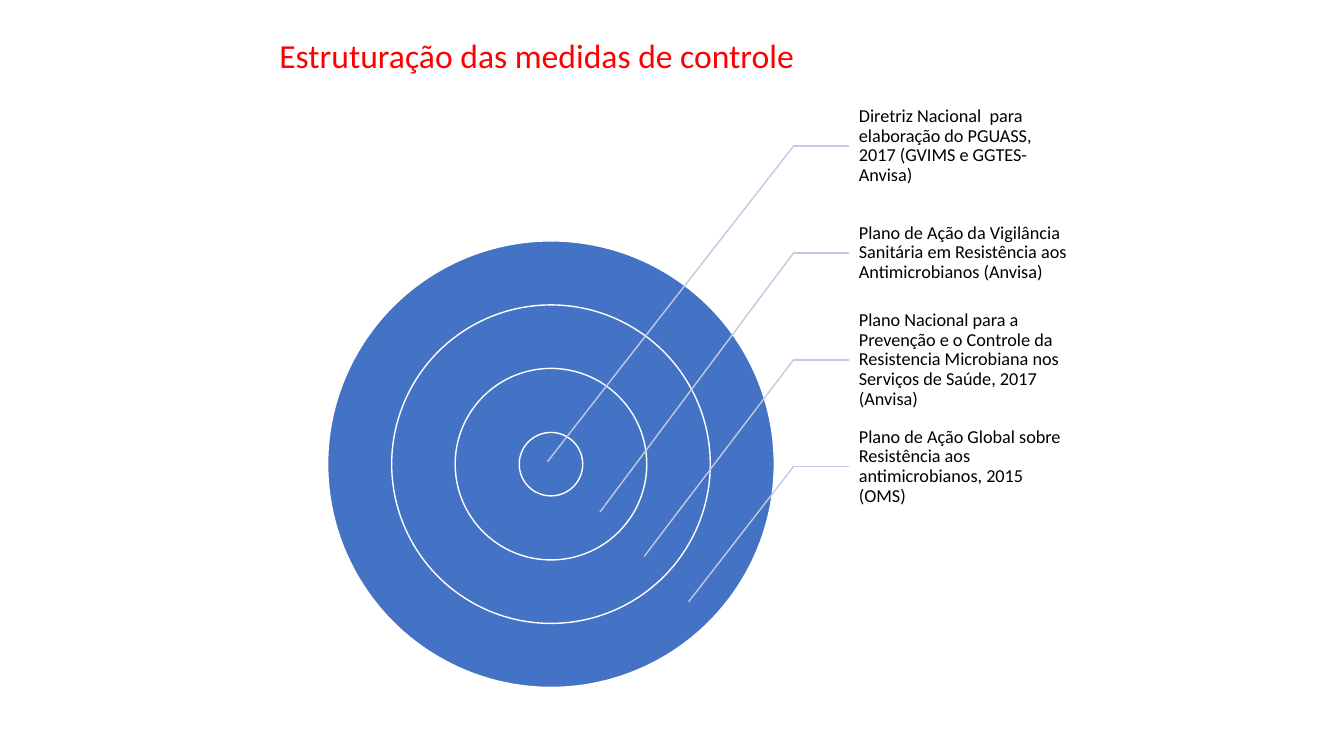
from dataclasses import dataclass

from lxml.etree import SubElement
from pptx import Presentation
from pptx.dml.color import RGBColor
from pptx.enum.shapes import MSO_CONNECTOR, MSO_SHAPE
from pptx.enum.text import MSO_ANCHOR, PP_ALIGN
from pptx.oxml.ns import qn
from pptx.shapes.shapetree import GroupShapes
from pptx.text.text import TextFrame
from pptx.util import Inches, Pt

COLORS = {
    "title": "FF0000",
    "text": "000000",
    "ring": "4472C4",
    "edge": "FFFFFF",
    "leader": "C1C9E4",
}
FONT = "Calibri"

CENTER_X, CENTER_Y = 5.465, 4.605
DIAMETERS = [4.43, 3.16, 1.9, 0.63]

LABEL_X, LABEL_W, LABEL_H = 8.42, 2.21, 1.06
LABEL_TOP = 0.92
BEND_X = 7.87


@dataclass
class Level:
    text: str
    tip_x: float
    tip_y: float


LEVELS = [
    Level("Diretriz Nacional  para elaboração do PGUASS, 2017 (GVIMS e GGTES- Anvisa)", 5.43, 4.58),
    Level("Plano de Ação da Vigilância Sanitária em Resistência aos Antimicrobianos (Anvisa)", 5.95, 5.08),
    Level(
        "Plano Nacional para a Prevenção e o Controle da Resistencia Microbiana "
        "nos Serviços de Saúde, 2017 (Anvisa)",
        6.39,
        5.52,
    ),
    Level("Plano de Ação Global sobre Resistência aos antimicrobianos, 2015 (OMS)", 6.83, 5.97),
]


def color(name: str) -> RGBColor:
    return RGBColor.from_string(COLORS[name])


def write(frame: TextFrame, text: str, size: float, shade: str) -> None:
    frame.word_wrap = True
    frame.vertical_anchor = MSO_ANCHOR.MIDDLE
    para = frame.paragraphs[0]
    para.alignment = PP_ALIGN.LEFT
    para.line_spacing = 0.9
    run = para.add_run()
    run.text = text
    run.font.name = FONT
    run.font.size = Pt(size)
    run.font.color.rgb = color(shade)


def add_ring(shapes: GroupShapes, size: float) -> None:
    ring = shapes.add_shape(
        MSO_SHAPE.OVAL,
        Inches(CENTER_X - size / 2),
        Inches(CENTER_Y - size / 2),
        Inches(size),
        Inches(size),
    )
    ring.shadow.inherit = False
    ring.fill.solid()
    ring.fill.fore_color.rgb = color("ring")
    ring.line.color.rgb = color("edge")
    ring.line.width = Pt(1)


def add_line(shapes: GroupShapes, x1: float, y1: float, x2: float, y2: float) -> None:
    line = shapes.add_connector(
        MSO_CONNECTOR.STRAIGHT, Inches(x1), Inches(y1), Inches(x2), Inches(y2)
    )
    line.line.color.rgb = color("leader")
    line.line.width = Pt(1)
    SubElement(line._element.spPr, qn("a:effectLst"))


def add_level(shapes: GroupShapes, level: Level, top: float) -> None:
    """Add a label and the bent leader from it to its ring."""
    box = shapes.add_textbox(Inches(LABEL_X), Inches(top), Inches(LABEL_W), Inches(LABEL_H))
    frame = box.text_frame
    frame.margin_left = Inches(0.1)
    frame.margin_right = frame.margin_top = frame.margin_bottom = Inches(0.02)
    write(frame, level.text, 13, "text")

    middle = top + LABEL_H / 2
    add_line(shapes, BEND_X, middle, LABEL_X, middle)
    add_line(shapes, BEND_X, middle, level.tip_x, level.tip_y)


def main() -> None:
    deck = Presentation()
    deck.slide_width, deck.slide_height = Inches(13.33), Inches(7.5)
    slide = deck.slides.add_slide(deck.slide_layouts[5])

    title = slide.shapes.title
    title.left, title.top = Inches(2.67), Inches(0.3)
    title.width, title.height = Inches(5.42), Inches(0.54)
    write(title.text_frame, "Estruturação das medidas de controle", 24, "title")

    target = slide.shapes.add_group_shape().shapes
    for size in DIAMETERS:
        add_ring(target, size)
    for row, level in enumerate(LEVELS):
        add_level(target, level, LABEL_TOP + row * LABEL_H)

    deck.save("out.pptx")


if __name__ == "__main__":
    main()
